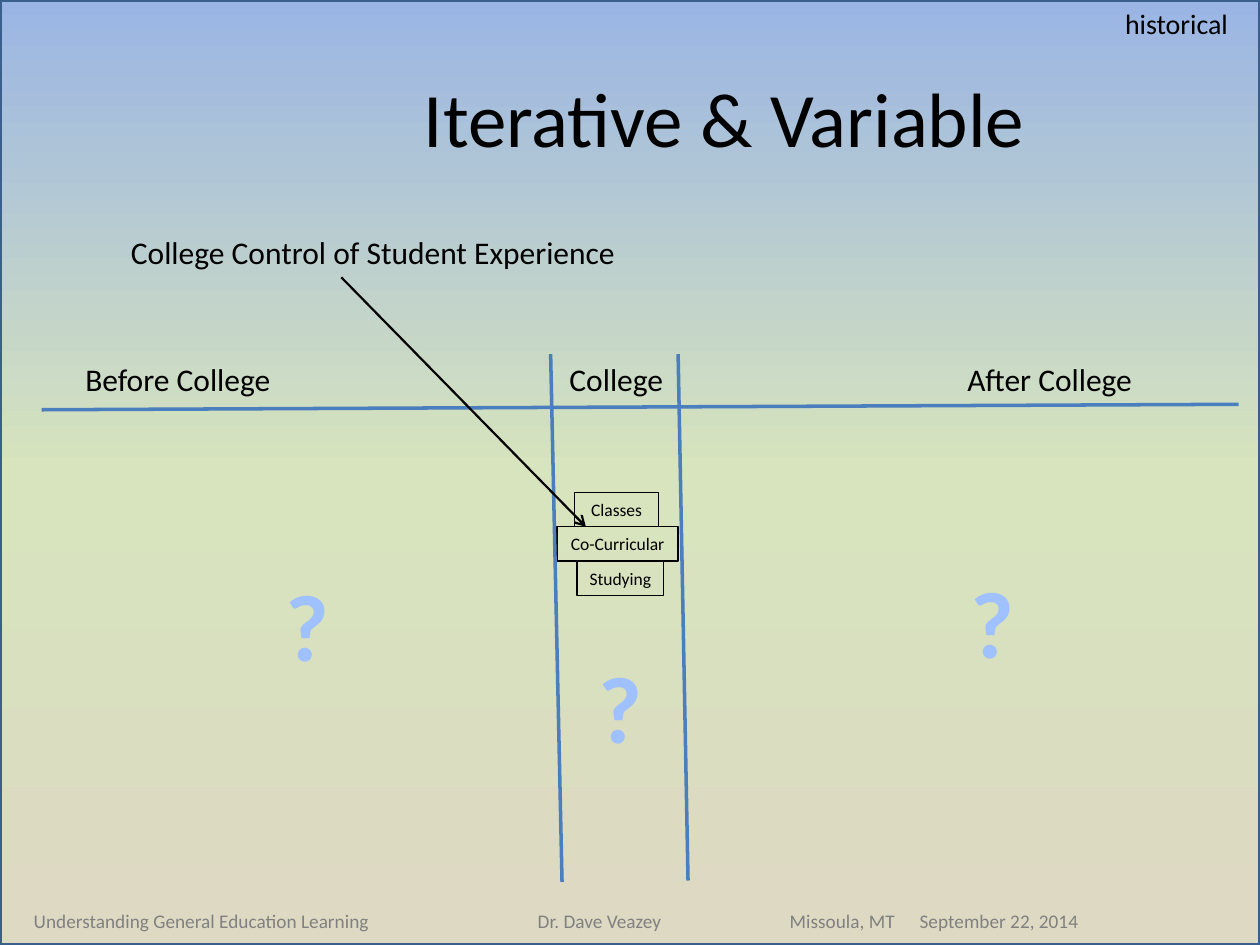
from lxml import etree
from pptx import Presentation
from pptx import util as u
from pptx.dml.color import RGBColor
from pptx.enum import shapes, text
from pptx.oxml import parse_xml
from pptx.oxml.ns import qn

BLACK = RGBColor(0, 0, 0)
GRAY = RGBColor(0x80, 0x80, 0x80)
BLUE = RGBColor(0x4B, 0x7E, 0xBC)
FRAME = RGBColor(0x3A, 0x5F, 0x8C)
PALE = RGBColor(0xA0, 0xC1, 0xFF)
GRADIENT = [(0, "9AB5E4"), (50, "D7E4BD"), (100, "DDD9C3")]
NS = "http://schemas.openxmlformats.org/drawingml/2006/main"

WIDTH, HEIGHT = 25.4, 19.05
TITLE = ("Iterative & Variable", (5.08, 0.76, 19.05, 3.18))
FOOTER = ("Understanding General Education Learning\tDr. Dave Veazey"
          "\tMissoula, MT\tSeptember 22, 2014", (0.43, 18.21, 24.77, 0.74))
FOOTER_TABS = [10.16, 15.24, 17.86]
LABELS = [
    ("College Control of Student Experience", (2.39, 4.57, 10.59, 1.02), 18),
    ("Before College", (1.47, 7.14, 4.45, 1.02), 18),
    ("College", (11.23, 7.14, 2.64, 1.02), 18),
    ("After College", (19.25, 7.14, 4.55, 1.02), 18),
    ("historical", (22.43, 0, 2.97, 0.94), 16),
]
ACTIVITIES = [("Classes", 11.58, 1.7), ("Co-Curricular", 11.23, 2.44),
              ("Studying", 11.63, 1.75)]
ACTIVITY_TOP, ACTIVITY_HEIGHT = 9.93, 0.69
QUESTIONS = [(5.49, 11.3), (19.3, 11.25), (11.81, 12.95)]
DIVIDERS = [(11.1, 7.14, 11.33, 17.78), (13.67, 7.14, 13.87, 17.75),
            (0.84, 8.26, 24.97, 8.15)]
ARROW = (6.88, 5.59, 11.81, 10.62)


def cm(values):
    return [u.Cm(v) for v in values]


def write(sp, words, size, color=BLACK, bold=False, wrap=True,
          align=text.PP_ALIGN.LEFT, anchor=text.MSO_ANCHOR.TOP):
    tf = sp.text_frame
    tf.text = words
    tf.word_wrap = wrap
    tf.vertical_anchor = anchor
    p = tf.paragraphs[0]
    p.alignment = align
    r = p.runs[0]
    r.font.color.rgb = color
    for key, value in {"name": "Calibri", "size": u.Pt(size), "bold": bold}.items():
        setattr(r.font, key, value)
    return p


def add_label(s, words, box, size, **look):
    return write(s.shapes.add_textbox(*cm(box)), words, size, **look)


def add_rect(s, box, color, width):
    sp = s.shapes.add_shape(shapes.MSO_SHAPE.RECTANGLE, *cm(box))
    sp.shadow.inherit = False
    sp.fill.background()
    sp.line.color.rgb = color
    sp.line.width = u.Pt(width)
    return sp


def add_line(s, ends, color, width):
    c = s.shapes.add_connector(shapes.MSO_CONNECTOR.STRAIGHT, *cm(ends))
    c.line.color.rgb = color
    c.line.width = u.Pt(width)
    etree.SubElement(c._element.spPr, qn("a:effectLst"))
    return c


def add_backdrop(s):
    sp = add_rect(s, (0, 0, WIDTH, HEIGHT), FRAME, 2)
    stops = "".join(f'<a:gs pos="{pos * 1000}"><a:srgbClr val="{color}"/></a:gs>'
                    for pos, color in GRADIENT)
    fill = parse_xml(f'<a:gradFill xmlns:a="{NS}" rotWithShape="1"><a:gsLst>{stops}'
                     '</a:gsLst><a:lin ang="5400000" scaled="0"/></a:gradFill>')
    pr = sp._element.spPr
    pr.replace(pr.find(qn("a:noFill")), fill)
    s.shapes.title._element.addprevious(sp._element)


def add_footer(s):
    words, box = FOOTER
    p = add_label(s, words, box, 11, color=GRAY)
    tabs = etree.SubElement(p._p.get_or_add_pPr(), qn("a:tabLst"))
    for pos in FOOTER_TABS:
        etree.SubElement(tabs, qn("a:tab"), pos=str(u.Cm(pos)), algn="l")


def main():
    prs = Presentation()
    prs.slide_width, prs.slide_height = cm((WIDTH, HEIGHT))
    s = prs.slides.add_slide(prs.slide_layouts[5])
    centered = {"align": text.PP_ALIGN.CENTER, "anchor": text.MSO_ANCHOR.MIDDLE}

    add_backdrop(s)
    add_footer(s)
    words, box = TITLE
    title = s.shapes.title
    for key, value in zip(("left", "top", "width", "height"), cm(box)):
        setattr(title, key, value)
    write(title, words, 44, **centered)

    for words, box, size in LABELS:
        add_label(s, words, box, size)
    for i, (words, left, width) in enumerate(ACTIVITIES):
        top = ACTIVITY_TOP + i * ACTIVITY_HEIGHT
        sp = add_rect(s, (left, top, width, ACTIVITY_HEIGHT), BLACK, 0.75)
        write(sp, words, 10, wrap=False, **centered)
    for ends in DIVIDERS:
        add_line(s, ends, BLUE, 2)
    for left, top in QUESTIONS:
        add_label(s, "?", (left, top, 1.4, 2.57), 54, color=PALE, bold=True,
                  wrap=False, align=text.PP_ALIGN.CENTER)

    arrow = add_line(s, ARROW, BLACK, 1.25)
    etree.SubElement(arrow.line._get_or_add_ln(), qn("a:tailEnd"), type="arrow")
    prs.save("out.pptx")


if __name__ == "__main__":
    main()
